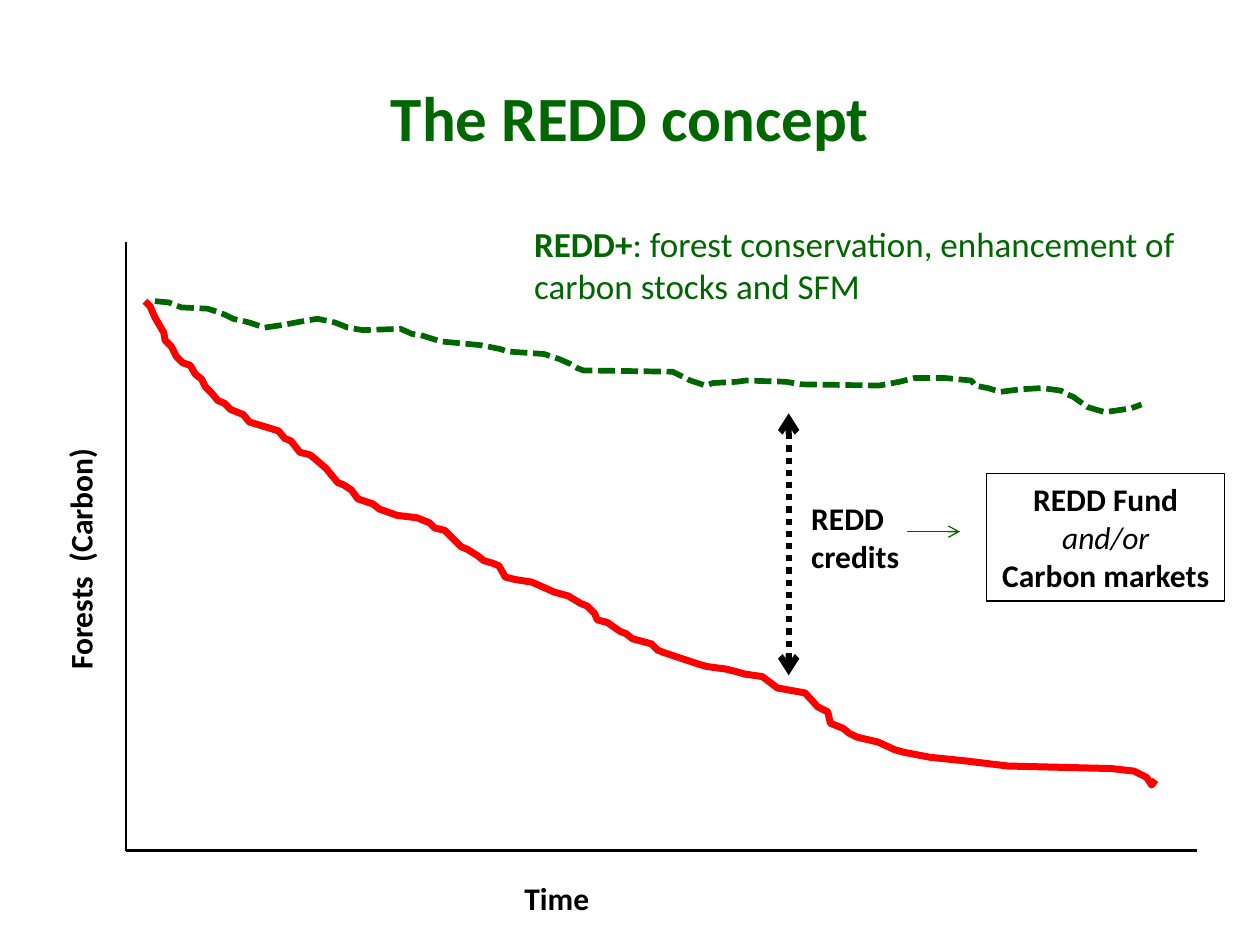
from dataclasses import dataclass

from pptx import Presentation
from pptx.dml.color import RGBColor
from pptx.enum.dml import MSO_LINE
from pptx.enum.shapes import MSO_CONNECTOR, MSO_SHAPE
from pptx.enum.text import MSO_ANCHOR, MSO_AUTO_SIZE, PP_ALIGN
from pptx.oxml.ns import qn
from pptx.util import Pt
from lxml.etree import SubElement


@dataclass(frozen=True)
class Theme:
    font: str = "Calibri"
    green: RGBColor = RGBColor(0x00, 0x66, 0x00)
    red: RGBColor = RGBColor(0xFF, 0x00, 0x00)
    black: RGBColor = RGBColor(0x00, 0x00, 0x00)
    title: int = 36
    note: int = 20
    label: int = 18


# Forest carbon over time, as (x, y) in hundredths of an inch
BASELINE = [
    (115, 239), (119, 243), (123, 252), (130, 264), (131, 270), (136, 275), (140, 283),
    (145, 288), (151, 290), (155, 297), (160, 301), (163, 307), (168, 312), (173, 318),
    (178, 320), (183, 325), (193, 329), (198, 335), (208, 338), (221, 342), (226, 348),
    (231, 350), (238, 359), (246, 361), (251, 365), (259, 372), (268, 383), (273, 385),
    (279, 389), (284, 396), (296, 400), (301, 404), (315, 409), (331, 411), (341, 415),
    (345, 419), (353, 421), (358, 426), (366, 434), (371, 436), (379, 441), (384, 445),
    (391, 447), (396, 449), (401, 458), (409, 460), (422, 462), (440, 470), (451, 473),
    (461, 479), (466, 481), (472, 487), (474, 492), (482, 494), (492, 501), (497, 503),
    (502, 507), (517, 511), (522, 516), (527, 518), (539, 522), (554, 527), (561, 529),
    (576, 531), (584, 533), (591, 535), (605, 537), (617, 546), (639, 550), (649, 561),
    (657, 565), (659, 574), (669, 578), (674, 582), (680, 585), (697, 589), (710, 595),
    (717, 597), (738, 601), (767, 604), (800, 608), (882, 610), (900, 612), (910, 617),
    (914, 623), (917, 619),
]
WITH_REDD = [
    (123, 239), (134, 240), (144, 244), (165, 245), (174, 248), (179, 250), (185, 253),
    (194, 255), (198, 256), (210, 260), (224, 258), (240, 255), (252, 253), (266, 256),
    (276, 260), (288, 262), (318, 261), (327, 265), (334, 266), (350, 271), (382, 274),
    (397, 277), (403, 279), (432, 281), (444, 285), (453, 289), (458, 292), (463, 294),
    (534, 295), (544, 300), (548, 302), (560, 306), (566, 304), (585, 303), (592, 302),
    (624, 303), (635, 305), (698, 306), (714, 303), (726, 300), (750, 300), (771, 302),
    (774, 306), (784, 308), (794, 311), (810, 309), (827, 308), (842, 310), (847, 313),
    (852, 315), (863, 323), (873, 326), (877, 327), (885, 326), (898, 324), (906, 321),
]


class SlideBuilder:
    def __init__(self, slide, theme):
        self.slide = slide
        self.theme = theme

    def set_text(self, sp, paragraphs, size, color, align=PP_ALIGN.LEFT):
        """Each paragraph is a list of (text, style); style holds b and/or i."""
        tf = sp.text_frame
        for i, runs in enumerate(paragraphs):
            p = tf.add_paragraph() if i else tf.paragraphs[0]
            p.alignment = align
            for text, style in runs:
                r = p.add_run()
                r.text = text
                r.font.name = self.theme.font
                r.font.size = Pt(size)
                r.font.color.rgb = color
                r.font.bold = "b" in style
                r.font.italic = "i" in style

    def style_line(self, sp, color, width, dash=None):
        sp.line.color.rgb = color
        sp.line.width = Pt(width)
        if dash:
            sp.line.dash_style = dash

    def title(self, text, x, y, w, h):
        sp = self.slide.shapes.title
        sp.left, sp.top, sp.width, sp.height = Pt(x), Pt(y), Pt(w), Pt(h)
        sp.text_frame.vertical_anchor = MSO_ANCHOR.MIDDLE
        self.set_text(sp, [[(text, "b")]], self.theme.title, self.theme.green, PP_ALIGN.CENTER)

    def text(self, paragraphs, x, y, w, h, size=None, color=None,
             align=PP_ALIGN.LEFT, wrap=True, rotation=0):
        sp = self.slide.shapes.add_textbox(Pt(x), Pt(y), Pt(w), Pt(h))
        sp.rotation = rotation
        sp.text_frame.word_wrap = wrap
        sp.text_frame.auto_size = MSO_AUTO_SIZE.SHAPE_TO_FIT_TEXT
        self.set_text(sp, paragraphs, size or self.theme.label, color or self.theme.black, align)

    def box(self, paragraphs, x, y, w, h):
        sp = self.slide.shapes.add_shape(MSO_SHAPE.RECTANGLE, Pt(x), Pt(y), Pt(w), Pt(h))
        sp.shadow.inherit = False
        sp.fill.background()
        self.style_line(sp, self.theme.black, 0.75)
        sp.text_frame.word_wrap = True
        sp.text_frame.vertical_anchor = MSO_ANCHOR.TOP
        sp.text_frame.auto_size = MSO_AUTO_SIZE.SHAPE_TO_FIT_TEXT
        self.set_text(sp, paragraphs, self.theme.label, self.theme.black, PP_ALIGN.CENTER)

    def curve(self, points, color, width, dash=None):
        fb = self.slide.shapes.build_freeform(*points[0], scale=Pt(0.72))
        fb.add_line_segments(points[1:], close=False)
        sp = fb.convert_to_shape()
        sp.shadow.inherit = False
        sp.fill.background()
        self.style_line(sp, color, width, dash)

    def line(self, x1, y1, x2, y2, color, width, dash=None, ends=()):
        """ends names the arrowheads to draw: headEnd at the start, tailEnd at the end."""
        cn = self.slide.shapes.add_connector(
            MSO_CONNECTOR.STRAIGHT, Pt(x1), Pt(y1), Pt(x2), Pt(y2))
        self.style_line(cn, color, width, dash)
        sp_pr = cn.element.spPr
        for end in ends:
            SubElement(sp_pr.find(qn("a:ln")), qn(f"a:{end}"), type="arrow")
        SubElement(sp_pr, qn("a:effectLst"))


def main():
    prs = Presentation()
    prs.slide_width, prs.slide_height = Pt(720), Pt(540)
    theme = Theme()
    s = SlideBuilder(prs.slides.add_slide(prs.slide_layouts[5]), theme)

    s.title("The REDD concept", 36, 21.6, 648, 90)
    s.curve(BASELINE, theme.red, 4)
    s.curve(WITH_REDD, theme.green, 3.25, MSO_LINE.SQUARE_DOT)

    s.line(450.7, 236.2, 450.7, 385.9, theme.black, 3.5, MSO_LINE.ROUND_DOT,
           ("headEnd", "tailEnd"))
    s.line(72, 138.2, 72, 486, theme.black, 1.5)
    s.line(684, 486, 72, 486, theme.black, 1.5)

    s.text([[("REDD", "b")], [("credits", "b")]], 456.5, 281.5, 64.8, 51.1, wrap=False)
    s.text([[("Forests  (Carbon)", "b")]], -41, 288.7, 173.5, 28.8, rotation=270)
    s.text([[("Time", "b")]], 264.2, 499, 108, 28.8, align=PP_ALIGN.CENTER)

    s.line(518.4, 303.8, 548.6, 303.8, theme.green, 0.75, ends=("tailEnd",))
    s.box([[("REDD Fund ", "b"), ("and/or", "i")], [("Carbon markets", "b")]],
          563.8, 270.7, 136.1, 72.7)
    s.text([[("REDD+", "b"),
             (": forest conservation, enhancement of carbon stocks and SFM", "")]],
           298.1, 123.8, 396.7, 55.4, theme.note, theme.green)

    prs.save("out.pptx")


if __name__ == "__main__":
    main()
